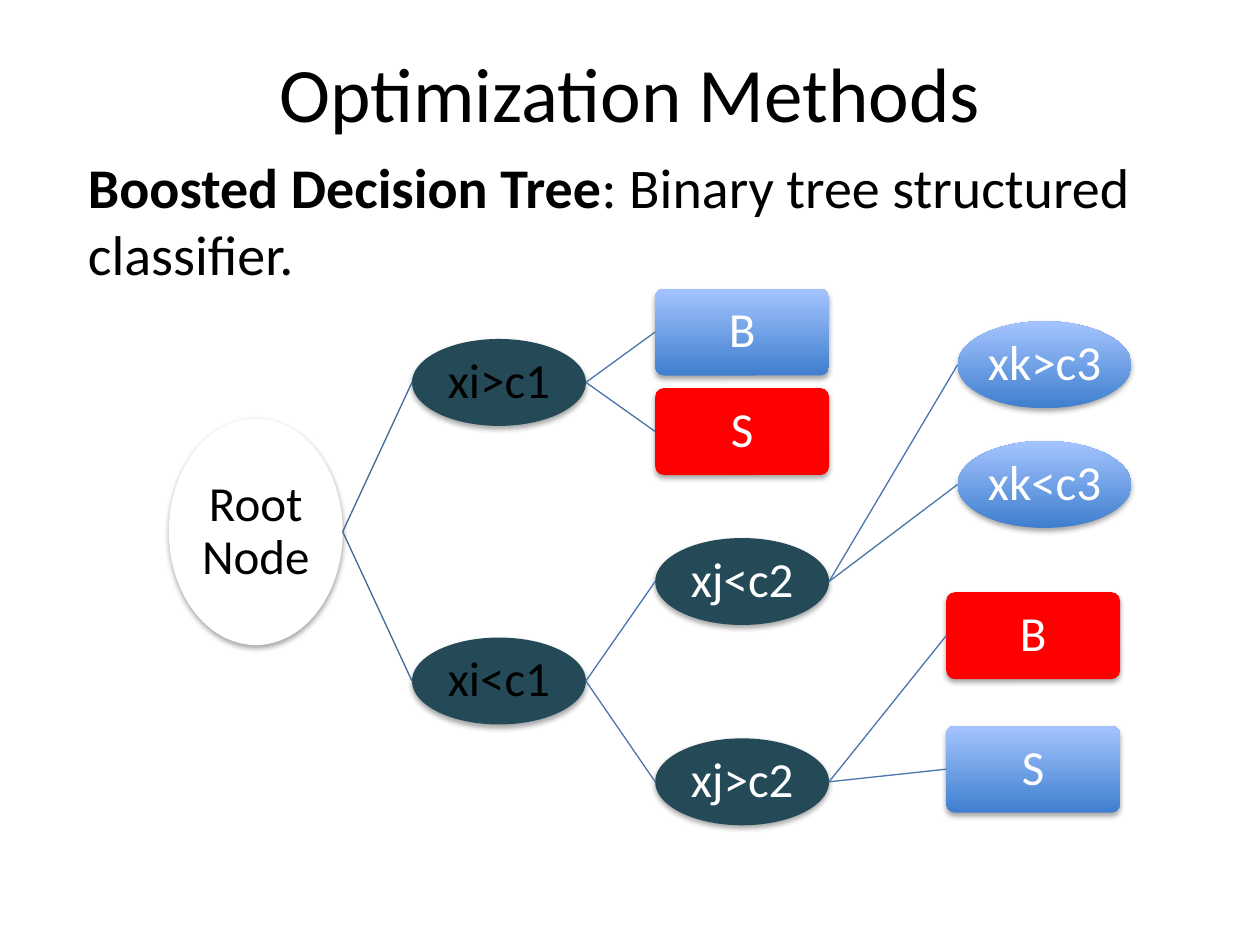
from lxml.etree import SubElement
from pptx import Presentation
from pptx.dml.color import RGBColor
from pptx.enum.shapes import MSO_CONNECTOR as Link, MSO_SHAPE as Kind
from pptx.enum.text import MSO_ANCHOR as Anchor, PP_ALIGN as Align
from pptx.oxml.ns import qn
from pptx.util import Inches, Pt

WIDE, HIGH = 1.38, 0.69
BLACK, WHITE, RED, TEAL = "000000", "FFFFFF", "FF0000", "244A58"
BLUE = ("3F7FCE", "A4C4FF")

# name: label, left, top, fill, text colour, parent
ROOT = ("Root Node", 1.34, 3.32, WHITE, BLACK)
CUTS = {
    "i>": ("xi>c1", 3.27, 2.69, TEAL, BLACK, "root"),
    "i<": ("xi<c1", 3.27, 5.06, TEAL, BLACK, "root"),
    "j<": ("xj<c2", 5.2, 4.27, TEAL, WHITE, "i<"),
    "j>": ("xj>c2", 5.2, 5.86, TEAL, WHITE, "i<"),
    "k>": ("xk>c3", 7.6, 2.55, BLUE, WHITE, "j<"),
    "k<": ("xk<c3", 7.6, 3.5, BLUE, WHITE, "j<"),
}
LEAVES = [
    ("B", 5.2, 2.29, BLUE, WHITE, "i>"),
    ("S", 5.2, 3.08, RED, WHITE, "i>"),
    ("B", 7.51, 4.7, RED, WHITE, "j>"),
    ("S", 7.51, 5.76, BLUE, WHITE, "j>"),
]


def rgb(code):
    """Turn a hex string into a colour."""
    return RGBColor.from_string(code)


def style(font, size, color=BLACK, bold=False):
    """Set the face, size, colour and weight of a font."""
    font.name, font.size, font.bold = "Calibri", Pt(size), bold
    font.color.rgb = rgb(color)


def shade(shape):
    """Give a shape a soft shadow below it."""
    shape.shadow.inherit = False
    effects = shape._element.spPr.find(qn("a:effectLst"))
    outer = SubElement(effects, qn("a:outerShdw"), blurRad="40000",
                       dist="23000", dir="5400000", rotWithShape="0")
    color = SubElement(outer, qn("a:srgbClr"), val=BLACK)
    SubElement(color, qn("a:alpha"), val="35000")


def paint(fill, color):
    """Fill with one colour, or with a gradient from bottom to top."""
    if isinstance(color, str):
        fill.solid()
        fill.fore_color.rgb = rgb(color)
        return
    fill.gradient()
    fill.gradient_angle = 90
    for stop, code in zip(fill.gradient_stops, color):
        stop.color.rgb = rgb(code)


def add_node(slide, kind, label, left, top, fill, color, high=HIGH):
    """Add one labelled node of the tree."""
    node = slide.shapes.add_shape(kind, Inches(left), Inches(top),
                                  Inches(WIDE), Inches(high))
    if kind == Kind.ROUNDED_RECTANGLE:
        node.adjustments[0] = 0.1
    paint(node.fill, fill)
    node.line.fill.background()
    shade(node)
    frame = node.text_frame
    frame.word_wrap = True
    frame.vertical_anchor = Anchor.MIDDLE
    frame.margin_left = frame.margin_right = Inches(0.02)
    frame.margin_top = frame.margin_bottom = Inches(0.02)
    frame.text = label
    para = frame.paragraphs[0]
    para.alignment, para.line_spacing = Align.CENTER, 0.9
    style(para.runs[0].font, 28, color)
    return node


def add_branch(slide, start, end, color, join=False):
    """Draw a line from the right of one node to the left of another."""
    line = slide.shapes.add_connector(
        Link.STRAIGHT, start.left + start.width, start.top + start.height // 2,
        end.left, end.top + end.height // 2)
    if join:
        line.end_connect(end, 1)
    line.line.color.rgb = rgb(color)
    line.line.width = Pt(0.75)
    SubElement(line._element.spPr, qn("a:effectLst"))


def add_title(slide, text):
    """Place and format the title."""
    title = slide.shapes.title
    title.left, title.top = Inches(0.6), Inches(0.31)
    title.width, title.height = Inches(8.8), Inches(0.84)
    frame = title.text_frame
    frame.text = text
    frame.vertical_anchor = Anchor.MIDDLE
    frame.paragraphs[0].alignment = Align.CENTER
    style(frame.paragraphs[0].runs[0].font, 44)


def add_intro(slide, term, text):
    """Add the sentence that opens with a bold term."""
    box = slide.shapes.add_textbox(Inches(0.6), Inches(1.16),
                                   Inches(8.8), Inches(1.2))
    frame = box.text_frame
    frame.word_wrap = True
    for part, bold in ((term, True), (text, False)):
        run = frame.paragraphs[0].add_run()
        run.text = part
        style(run.font, 32, bold=bold)


def add_tree(slide):
    """Draw the decision tree from its root to its leaves."""
    nodes = {"root": add_node(slide, Kind.OVAL, *ROOT, high=1.8)}
    for name, (*look, parent) in CUTS.items():
        nodes[name] = add_node(slide, Kind.OVAL, *look)
        color = "3F6797" if parent == "root" else "4875AC"
        add_branch(slide, nodes[parent], nodes[name], color)
    for *look, parent in LEAVES:
        leaf = add_node(slide, Kind.ROUNDED_RECTANGLE, *look)
        add_branch(slide, nodes[parent], leaf, "4875AC", join=True)


def main():
    """Build the slide and save it."""
    deck = Presentation()
    deck.slide_width, deck.slide_height = Inches(10), Inches(7.5)
    slide = deck.slides.add_slide(deck.slide_layouts[5])
    add_title(slide, "Optimization Methods")
    add_intro(slide, "Boosted Decision Tree",
              ": Binary tree structured classifier.")
    add_tree(slide)
    deck.save("out.pptx")


if __name__ == "__main__":
    main()
